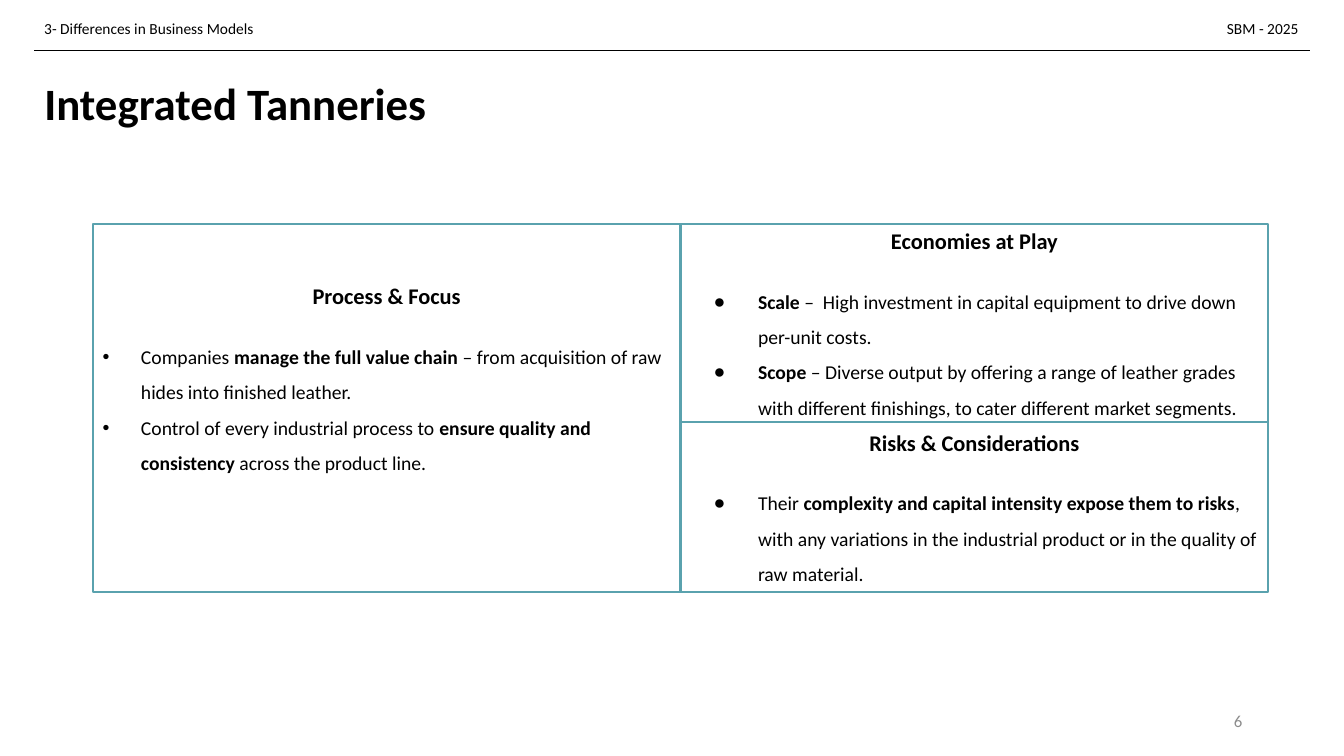
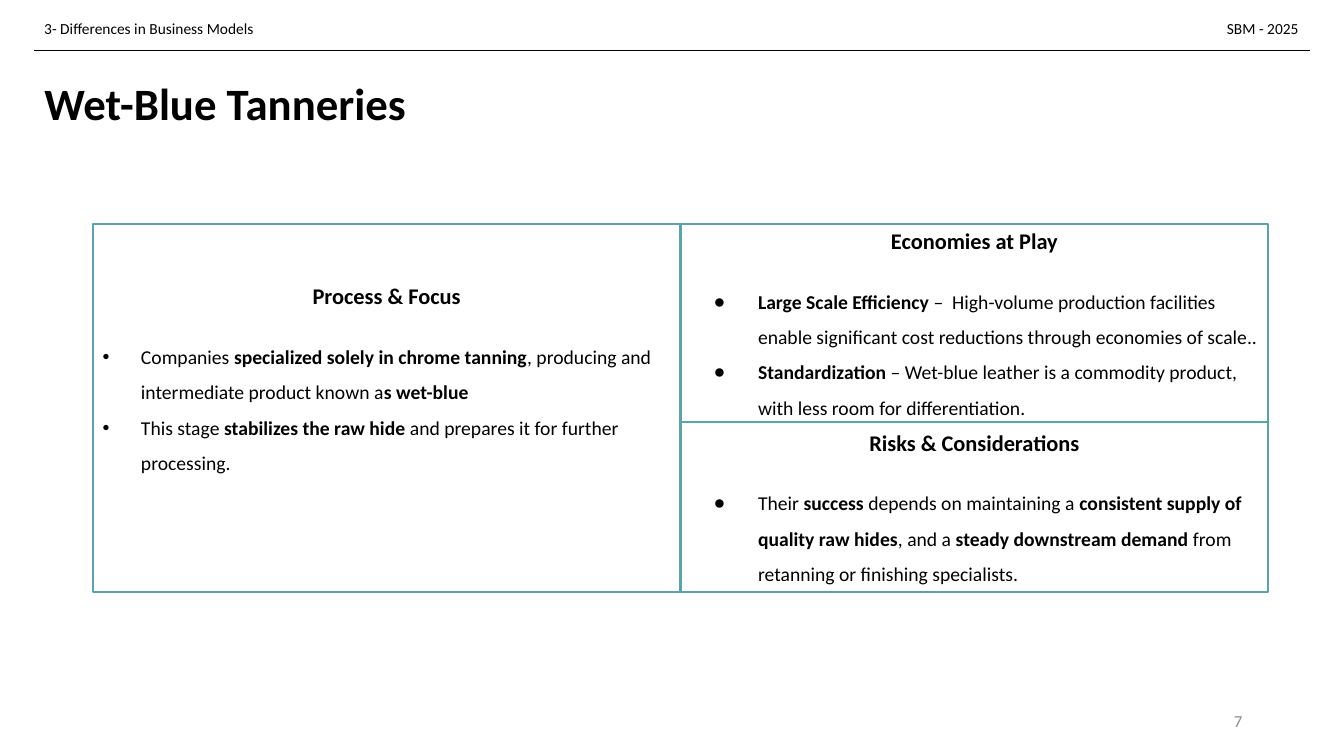
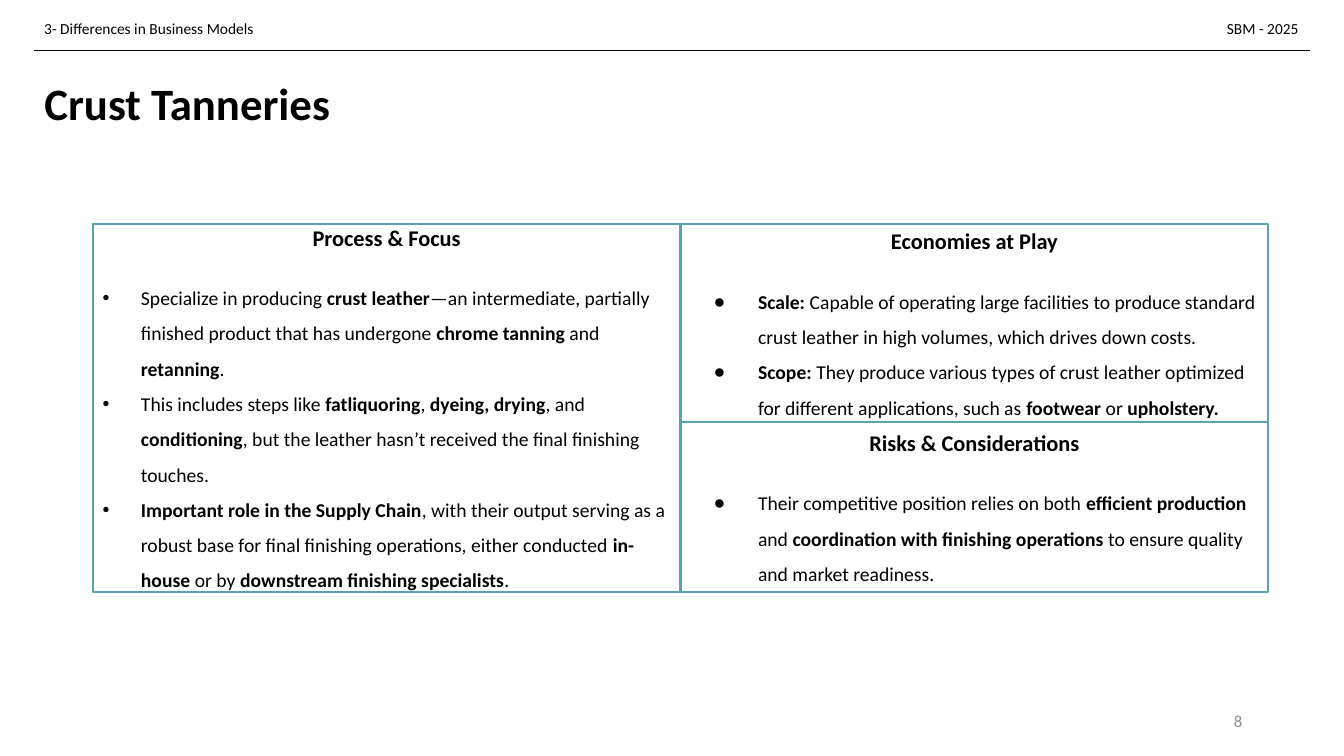
from lxml import etree
from pptx import Presentation
from pptx.dml.color import RGBColor
from pptx.enum.shapes import MSO_CONNECTOR, MSO_SHAPE
from pptx.enum.text import MSO_ANCHOR, MSO_AUTO_SIZE, PP_ALIGN
from pptx.oxml.ns import qn
from pptx.util import Inches, Pt

LEFT, CENTER, RIGHT = PP_ALIGN.LEFT, PP_ALIGN.CENTER, PP_ALIGN.RIGHT
MIDDLE = MSO_ANCHOR.MIDDLE
NO_AUTOFIT = MSO_AUTO_SIZE.NONE
RECTANGLE = MSO_SHAPE.RECTANGLE
STRAIGHT = MSO_CONNECTOR.STRAIGHT

BLACK = RGBColor(0x00, 0x00, 0x00)
WHITE = RGBColor(0xFF, 0xFF, 0xFF)
GRAY = RGBColor(0x8C, 0x8C, 0x8C)
TEAL = RGBColor(0x5A, 0xA2, 0xAE)
FONT = "Calibri"
FIRST_PAGE = 6
MARGIN = 0.34

# Panel grid: one tall panel on the left, two stacked on the right
PANEL_LEFT, PANEL_TOP, PANEL_WIDTH = 0.92, 2.22, 5.83
UPPER_HEIGHT, LOWER_HEIGHT = 1.97, 1.68
RIGHT_LEFT = PANEL_LEFT + PANEL_WIDTH
LOWER_TOP = PANEL_TOP + UPPER_HEIGHT

# Heading, left, top, height, bullet, indent of text, hang of bullet
PANELS = [
    ("Process & Focus", PANEL_LEFT, PANEL_TOP, UPPER_HEIGHT + LOWER_HEIGHT, "•", 0.38, 0.38),
    ("Economies at Play", RIGHT_LEFT, PANEL_TOP, UPPER_HEIGHT, "●", 0.67, 0.44),
    ("Risks & Considerations", RIGHT_LEFT, LOWER_TOP, LOWER_HEIGHT, "●", 0.67, 0.44),
]

# Title, bottom inset of the left panel, bullets per panel (** marks bold)
TANNERIES = [
    ("Integrated Tanneries", 0.63, [
        ["Companies **manage the full value chain** – from acquisition of raw hides "
         "into finished leather.",
         "Control of every industrial process to **ensure quality and consistency** "
         "across the product line."],
        ["**Scale **–  High investment in capital equipment to drive down per-unit costs.",
         "**Scope** – Diverse output by offering a range of leather grades with different "
         "finishings, to cater different market segments."],
        ["Their **complexity and capital intensity expose them to risks**, with any "
         "variations in the industrial product or in the quality of raw material."],
    ]),
    ("Wet-Blue Tanneries", 0.63, [
        ["Companies **specialized solely in chrome tanning**, producing and intermediate "
         "product known a**s wet-blue**",
         "This stage **stabilizes the raw hide **and prepares it for further processing."],
        ["**Large Scale Efficiency **–  High-volume production facilities enable "
         "significant cost reductions through economies of scale..",
         "**Standardization** – Wet-blue leather is a commodity product, with less room "
         "for differentiation."],
        ["Their **success **depends on maintaining a** consistent supply of quality raw "
         "hides**, and a **steady downstream demand **from retanning or finishing "
         "specialists."],
    ]),
    ("Crust Tanneries", 0.05, [
        ["Specialize in producing **crust leather**—an intermediate, partially finished "
         "product that has undergone **chrome tanning** and **retanning**.",
         "This includes steps like **fatliquoring**, **dyeing, drying**, and "
         "**conditioning**, but the leather hasn’t received the final finishing touches.",
         "**Important role in the Supply Chain**, with their output serving as a robust "
         "base for final finishing operations, either conducted **in-house** or by "
         "**downstream finishing specialists**."],
        ["**Scale:** Capable of operating large facilities to produce standard crust "
         "leather in high volumes, which drives down costs.",
         "**Scope:** They produce various types of crust leather optimized for different "
         "applications, such as **footwear** or **upholstery.**"],
        ["Their competitive position relies on both **efficient production** and "
         "**coordination with finishing operations** to ensure quality and market "
         "readiness."],
    ]),
]


def write_runs(paragraph, marked_text, size, color=BLACK):
    """Add the text as runs; every second part between ** marks is bold."""
    for index, part in enumerate(marked_text.split("**")):
        if part:
            run = paragraph.add_run()
            run.text = part
            run.font.name = FONT
            run.font.size = Pt(size)
            run.font.bold = index % 2 == 1
            run.font.color.rgb = color


def add_bullet(paragraph, bullet, indent, hang):
    properties = paragraph._p.get_or_add_pPr()
    properties.set("marL", str(Inches(indent)))
    properties.set("indent", str(-Inches(hang)))
    etree.SubElement(properties, qn("a:buFont")).set("typeface", "Arial")
    etree.SubElement(properties, qn("a:buChar")).set("char", bullet)


prs = Presentation()
prs.slide_width, prs.slide_height = Inches(13.33), Inches(7.5)

# Shared title position
layout = prs.slide_layouts[5]
layout_title = layout.placeholders[0]
layout_title.left, layout_title.top = Inches(MARGIN), Inches(0.5)
layout_title.width, layout_title.height = Inches(11.5), Inches(1.11)

for page, (title, left_panel_inset, panel_bullets) in enumerate(TANNERIES, FIRST_PAGE):
    slide = prs.slides.add_slide(layout)

    # Title
    title_frame = slide.shapes.title.text_frame
    title_frame.auto_size = NO_AUTOFIT
    title_frame.vertical_anchor = MIDDLE
    title_paragraph = title_frame.paragraphs[0]
    title_paragraph.alignment = LEFT
    title_paragraph.line_spacing = 0.9
    write_runs(title_paragraph, f"**{title}**", 32)

    # Header rule
    rule = slide.shapes.add_connector(
        STRAIGHT, Inches(MARGIN), Inches(0.5), Inches(12.99), Inches(0.5))
    rule.line.color.rgb = BLACK
    rule.line.width = Pt(0.25)
    etree.SubElement(rule._element.spPr, qn("a:effectLst"))

    # Header texts and page number
    for text, left, top, width, height, size, color, alignment in [
        ("3- Differences in Business Models", MARGIN, 0.14, 3.22, 0.29, 11, BLACK, LEFT),
        ("SBM - 2025", 12.07, 0.14, 1, 0.29, 11, BLACK, LEFT),
        (str(page), 9.42, 6.95, 3, 0.4, 12, GRAY, RIGHT),
    ]:
        label = slide.shapes.add_textbox(
            Inches(left), Inches(top), Inches(width), Inches(height)).text_frame
        label.word_wrap = True
        label.vertical_anchor = MIDDLE
        label.paragraphs[0].alignment = alignment
        write_runs(label.paragraphs[0], text, size, color)

    # Panels
    for (heading, left, top, height, bullet, indent, hang), bullets in zip(PANELS, panel_bullets):
        panel = slide.shapes.add_shape(
            RECTANGLE, Inches(left), Inches(top), Inches(PANEL_WIDTH), Inches(height))
        panel.shadow.inherit = False
        panel.fill.solid()
        panel.fill.fore_color.rgb = WHITE
        panel.line.color.rgb = TEAL
        panel.line.width = Pt(1.5)

        frame = panel.text_frame
        frame.word_wrap = True
        frame.vertical_anchor = MIDDLE
        if left == PANEL_LEFT:
            frame.margin_bottom = Inches(left_panel_inset)
        heading_paragraph = frame.paragraphs[0]
        heading_paragraph.alignment = CENTER
        heading_paragraph.space_after = Pt(17)
        write_runs(heading_paragraph, f"**{heading}**", 16)

        for bullet_text in bullets:
            point = frame.add_paragraph()
            point.alignment = LEFT
            point.line_spacing = 1.5
            add_bullet(point, bullet, indent, hang)
            write_runs(point, bullet_text, 14)

prs.save("out.pptx")
